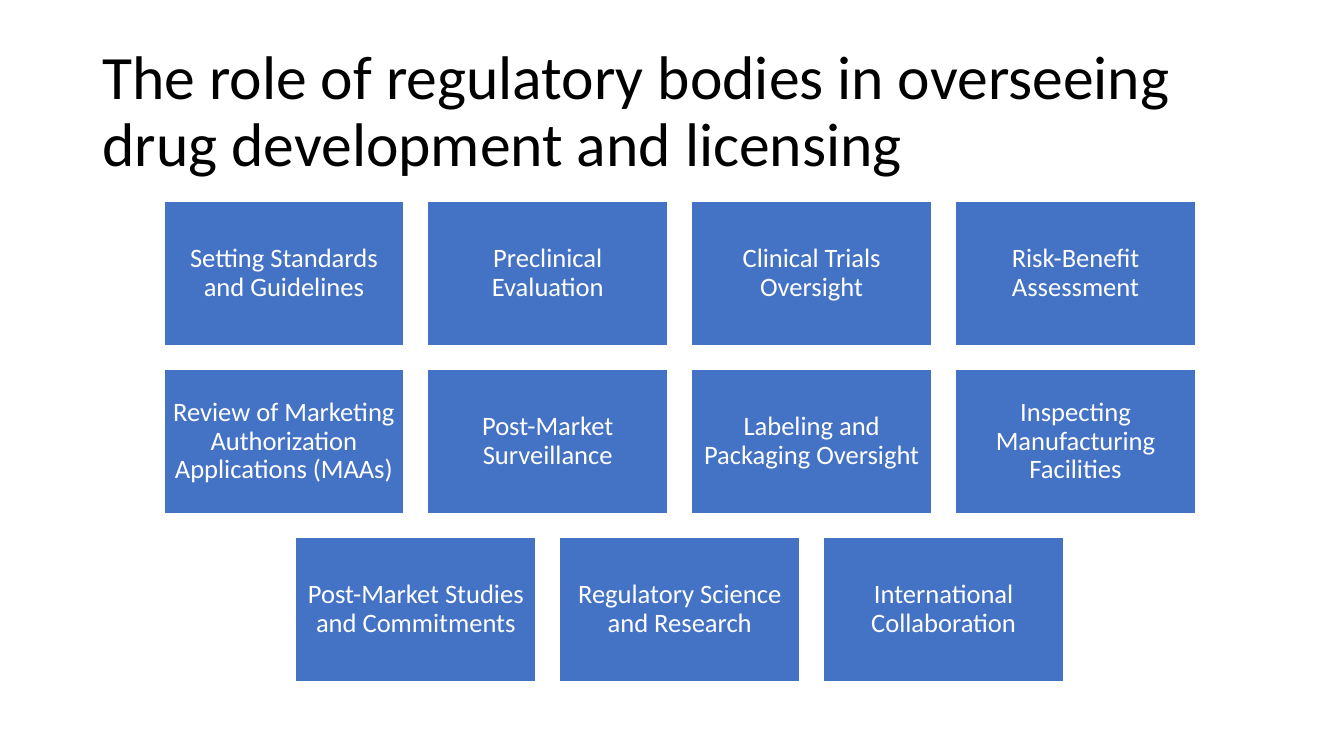
from pptx import Presentation
from pptx.dml.color import RGBColor
from pptx.enum import shapes, text
from pptx.util import Cm, Pt

BLUE = RGBColor(0x44, 0x72, 0xC4)
WHITE = RGBColor(0xFF, 0xFF, 0xFF)
BLACK = RGBColor(0x00, 0x00, 0x00)
FONT = "Calibri"

TITLE = "The role of regulatory bodies in overseeing drug development and licensing"
ROLES = [
    ["Setting Standards and Guidelines", "Preclinical Evaluation",
     "Clinical Trials Oversight", "Risk-Benefit Assessment"],
    ["Review of Marketing Authorization Applications (MAAs)",
     "Post-Market Surveillance", "Labeling and Packaging Oversight",
     "Inspecting Manufacturing Facilities"],
    ["Post-Market Studies and Commitments",
     "Regulatory Science and Research", "International Collaboration"],
]

# Grid of boxes, in centimetres
MIDDLE, TOP = 17.13, 5.08
WIDTH, HEIGHT = 6.05, 3.63
GAP = 0.6


def write(frame, words, size, color, align):
    frame.text = words
    frame.word_wrap = True
    frame.auto_size = text.MSO_AUTO_SIZE.NONE
    frame.vertical_anchor = text.MSO_ANCHOR.MIDDLE
    para = frame.paragraphs[0]
    para.alignment = align
    para.line_spacing = 0.9
    font = para.runs[0].font
    font.name, font.size = FONT, Pt(size)
    font.color.rgb = color


def add_title(slide):
    title = slide.shapes.title
    title.left, title.top = Cm(2.33), Cm(1.01)
    title.width, title.height = Cm(29.21), Cm(3.68)
    write(title.text_frame, TITLE, 44, BLACK, text.PP_ALIGN.LEFT)


def add_box(slide, left, top, words):
    box = slide.shapes.add_shape(
        shapes.MSO_SHAPE.RECTANGLE, Cm(left), Cm(top), Cm(WIDTH), Cm(HEIGHT))
    box.shadow.inherit = False
    box.fill.solid()
    box.fill.fore_color.rgb = BLUE
    box.line.color.rgb = WHITE
    box.line.width = Pt(1)
    frame = box.text_frame
    frame.margin_left = frame.margin_right = Cm(0.19)
    frame.margin_top = frame.margin_bottom = Cm(0.19)
    write(frame, words, 19, WHITE, text.PP_ALIGN.CENTER)


def add_grid(slide, rows):
    """Stack the rows of boxes, each row centred on MIDDLE."""
    for i, row in enumerate(rows):
        span = len(row) * (WIDTH + GAP) - GAP
        for j, words in enumerate(row):
            add_box(slide, MIDDLE - span / 2 + j * (WIDTH + GAP),
                    TOP + i * (HEIGHT + GAP), words)


def main():
    deck = Presentation()
    deck.slide_width, deck.slide_height = Cm(33.87), Cm(19.05)
    slide = deck.slides.add_slide(deck.slide_layouts[5])
    add_title(slide)
    add_grid(slide, ROLES)
    deck.save("out.pptx")


if __name__ == "__main__":
    main()
